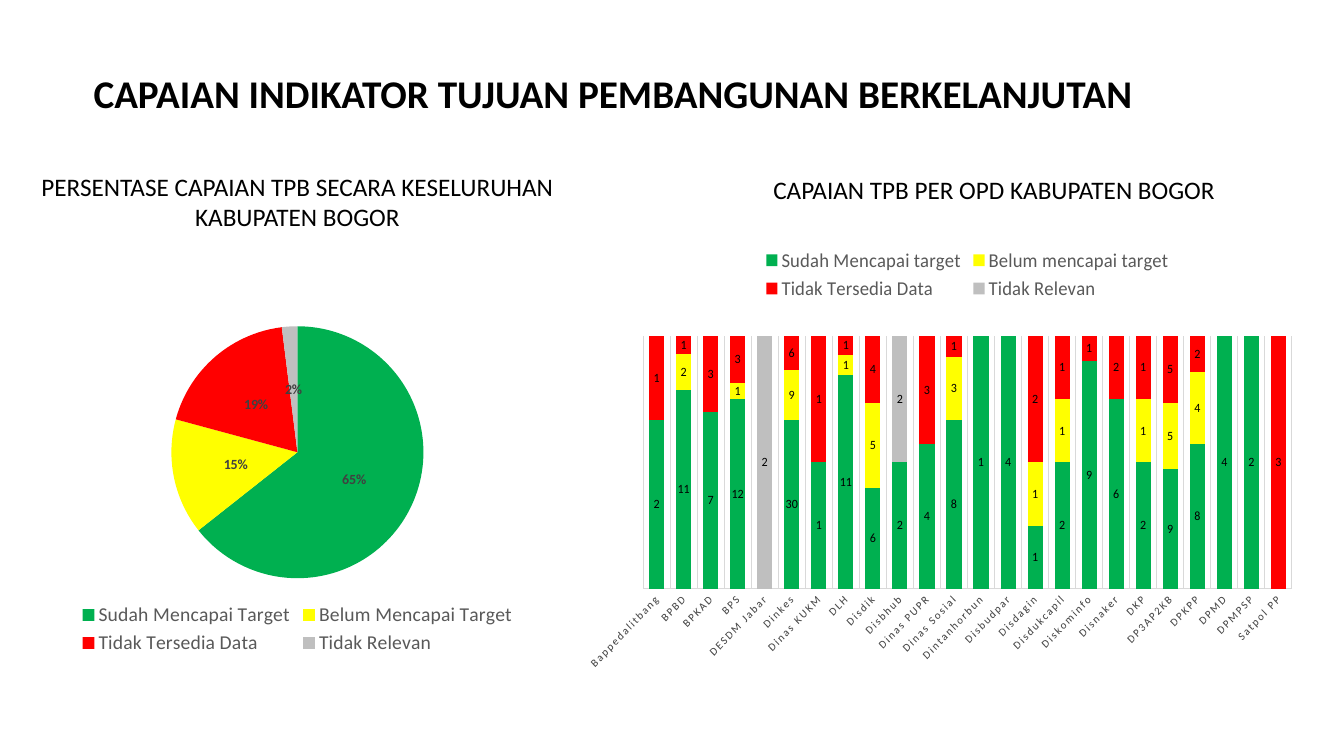
from lxml import etree
from pptx import Presentation
from pptx.chart.data import CategoryChartData
from pptx.dml.color import RGBColor
from pptx.enum.chart import XL_CHART_TYPE as ChartType
from pptx.enum.chart import XL_LABEL_POSITION as LabelPosition
from pptx.enum.chart import XL_LEGEND_POSITION as LegendPosition
from pptx.enum.chart import XL_TICK_MARK as TickMark
from pptx.enum.text import MSO_AUTO_SIZE as AutoSize
from pptx.enum.text import PP_ALIGN as Align
from pptx.oxml.ns import qn
from pptx.util import Inches, Pt

FONT = "Calibri"
BLACK = RGBColor(0x00, 0x00, 0x00)
DARK_GREY = RGBColor(0x40, 0x40, 0x40)
TEXT_GREY = RGBColor(0x59, 0x59, 0x59)
LINE_GREY = RGBColor(0xD9, 0xD9, 0xD9)
STATUS_COLORS = [
    RGBColor(0x00, 0xB0, 0x50),
    RGBColor(0xFF, 0xFF, 0x00),
    RGBColor(0xFF, 0x00, 0x00),
    RGBColor(0xBF, 0xBF, 0xBF),
]

HEADINGS = [
    ("CAPAIAN INDIKATOR TUJUAN PEMBANGUNAN BERKELANJUTAN",
     (0.83, 0.64, 11.76, 0.57), 28, True, Align.LEFT),
    ("PERSENTASE CAPAIAN TPB SECARA KESELURUHAN KABUPATEN BOGOR",
     (0.22, 1.65, 5.46, 0.71), 18, False, Align.CENTER),
    ("CAPAIAN TPB PER OPD KABUPATEN BOGOR",
     (7.13, 1.68, 5.46, 0.4), 18, False, Align.CENTER),
]

OVERALL = [
    ("Sudah Mencapai Target", 65),
    ("Belum Mencapai Target", 15),
    ("Tidak Tersedia Data", 19),
    ("Tidak Relevan", 2),
]

STATUSES = ["Sudah Mencapai target", "Belum mencapai target",
            "Tidak Tersedia Data", "Tidak Relevan"]
AGENCIES = [
    ("Bappedalitbang", 2, None, 1, None),
    ("BPBD", 11, 2, 1, None),
    ("BPKAD", 7, None, 3, None),
    ("BPS", 12, 1, 3, None),
    ("DESDM Jabar", None, None, None, 2),
    ("Dinkes", 30, 9, 6, None),
    ("Dinas KUKM", 1, None, 1, None),
    ("DLH", 11, 1, 1, None),
    ("Disdik", 6, 5, 4, None),
    ("Disbhub", 2, None, None, 2),
    ("Dinas PUPR", 4, None, 3, None),
    ("Dinas Sosial", 8, 3, 1, None),
    ("Dintanhorbun", 1, None, None, None),
    ("Disbudpar", 4, None, None, None),
    ("Disdagin", 1, 1, 2, None),
    ("Disdukcapil", 2, 1, 1, None),
    ("Diskominfo", 9, None, 1, None),
    ("Disnaker", 6, None, 2, None),
    ("DKP", 2, 1, 1, None),
    ("DP3AP2KB", 9, 5, 5, None),
    ("DPKPP", 8, 4, 2, None),
    ("DPMD", 4, None, None, None),
    ("DPMPSP", 2, None, None, None),
    ("Satpol PP", None, None, 3, None),
]


def style_font(font, size, color, bold=False):
    font.name = FONT
    font.size = Pt(size)
    font.bold = bold
    font.color.rgb = color


def fill_solid(item, color):
    item.format.fill.solid()
    item.format.fill.fore_color.rgb = color


def add_heading(page, text, area, size, bold, align):
    box = page.shapes.add_textbox(*map(Inches, area))
    frame = box.text_frame
    frame.word_wrap = True
    frame.auto_size = AutoSize.SHAPE_TO_FIT_TEXT
    frame.text = text
    para = frame.paragraphs[0]
    para.alignment = align
    style_font(para.runs[0].font, size, BLACK, bold)


def add_status_chart(page, kind, area, data, legend_position, plot_area):
    chart = page.shapes.add_chart(kind, *map(Inches, area), data).chart
    chart.has_title = False
    style_font(chart.font, 10, BLACK)
    chart.has_legend = True
    chart.legend.position = legend_position
    chart.legend.include_in_layout = False
    style_font(chart.legend.font, 14, TEXT_GREY)
    place_plot(chart, plot_area)
    return chart


def place_plot(chart, plot_area):
    plot_element = chart.element.find(".//" + qn("c:plotArea"))
    for old_layout in plot_element.findall(qn("c:layout")):
        plot_element.remove(old_layout)
    layout = etree.Element(qn("c:layout"))
    plot_element.insert(0, layout)
    manual = etree.SubElement(layout, qn("c:manualLayout"))
    settings = [("layoutTarget", "inner"), ("xMode", "edge"), ("yMode", "edge")]
    settings += zip("xywh", plot_area)
    for tag, value in settings:
        etree.SubElement(manual, qn("c:" + tag)).set("val", str(value))


def show_labels(labels, size, color, bold=False):
    labels.show_value = True
    labels.position = LabelPosition.CENTER
    style_font(labels.font, size, color, bold)


def add_overall_chart(page):
    data = CategoryChartData()
    data.categories = [name for name, share in OVERALL]
    data.add_series("Series 1", [share for name, share in OVERALL])
    chart = add_status_chart(page, ChartType.PIE, (0.45, 3.09, 5, 3.45), data,
                             LegendPosition.BOTTOM, (0.25, 0.04, 0.5, 0.73))
    plot = chart.plots[0]
    for index, color in enumerate(STATUS_COLORS):
        fill_solid(plot.series[0].points[index], color)
    labels = plot.series[0].data_labels
    show_labels(labels, 10, DARK_GREY, True)
    labels.number_format = '0"%"'
    labels.number_format_is_linked = False


def add_agency_chart(page):
    names, *columns = zip(*AGENCIES)
    data = CategoryChartData()
    data.categories = names
    for status, counts in zip(STATUSES, columns):
        data.add_series(status, counts)
    chart = add_status_chart(page, ChartType.COLUMN_STACKED_100,
                             (5.83, 2.35, 7.19, 4.92), data,
                             LegendPosition.TOP, (0.03, 0.2, 0.94, 0.51))
    plot = chart.plots[0]
    plot.gap_width = 79
    plot.overlap = 100
    for series, color in zip(plot.series, STATUS_COLORS):
        fill_solid(series, color)
        show_labels(series.data_labels, 9, BLACK)

    chart.value_axis.visible = False
    chart.value_axis.has_major_gridlines = False
    axis = chart.category_axis
    axis.has_major_gridlines = True
    axis.major_tick_mark = TickMark.NONE
    axis.minor_tick_mark = TickMark.NONE
    for line in (axis.format.line, axis.major_gridlines.format.line):
        line.color.rgb = LINE_GREY
        line.width = Pt(0.75)
    style_font(axis.tick_labels.font, 8, TEXT_GREY)
    text_style = axis._element.find(qn("c:txPr"))
    text_style.find(qn("a:bodyPr")).set("rot", "-2700000")
    text_style.find(".//" + qn("a:defRPr")).set("spc", "120")


def main():
    deck = Presentation()
    deck.slide_width = Inches(13.33)
    deck.slide_height = Inches(7.5)
    page = deck.slides.add_slide(deck.slide_layouts[6])
    for heading in HEADINGS:
        add_heading(page, *heading)
    add_agency_chart(page)
    add_overall_chart(page)
    deck.save("out.pptx")


if __name__ == "__main__":
    main()
